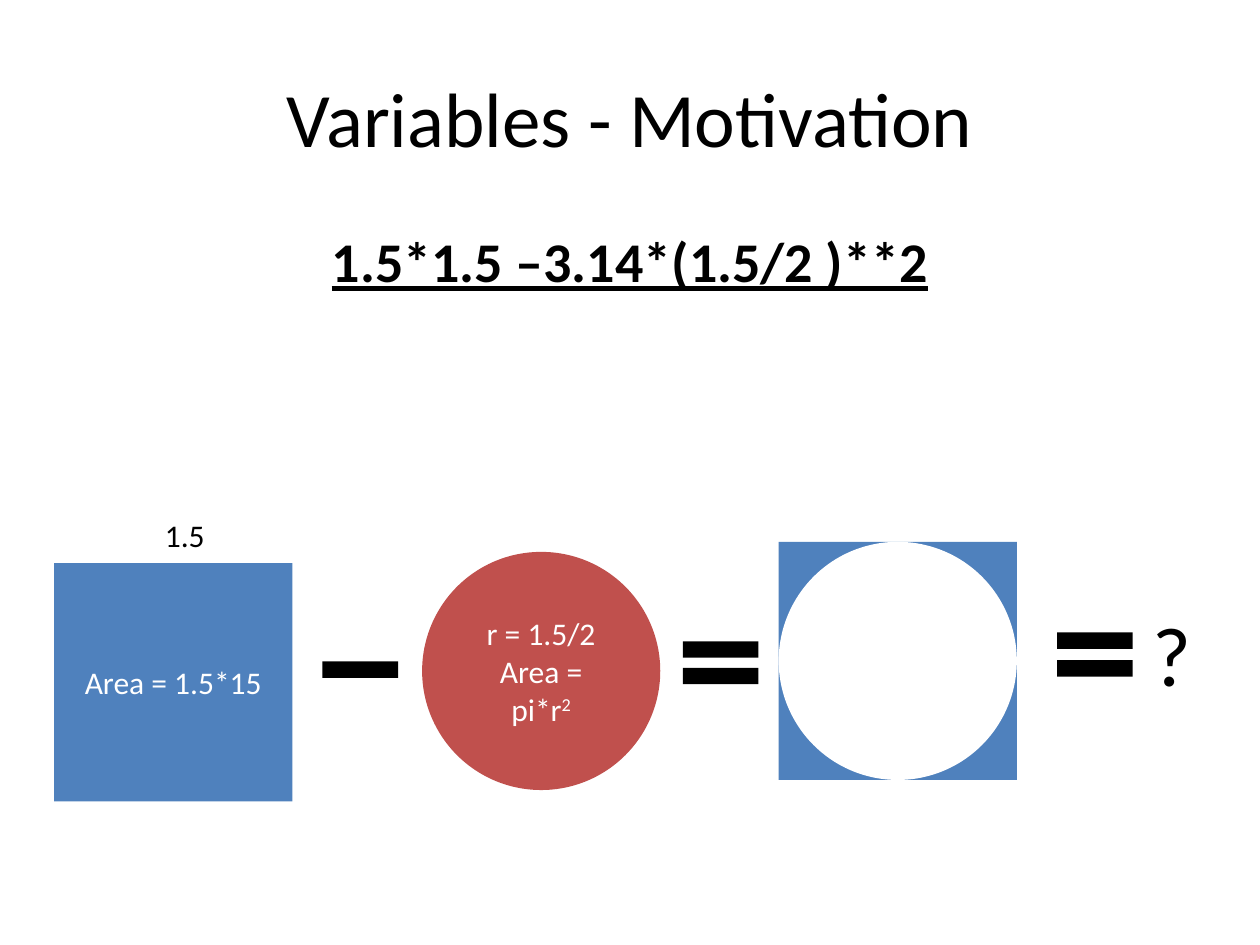
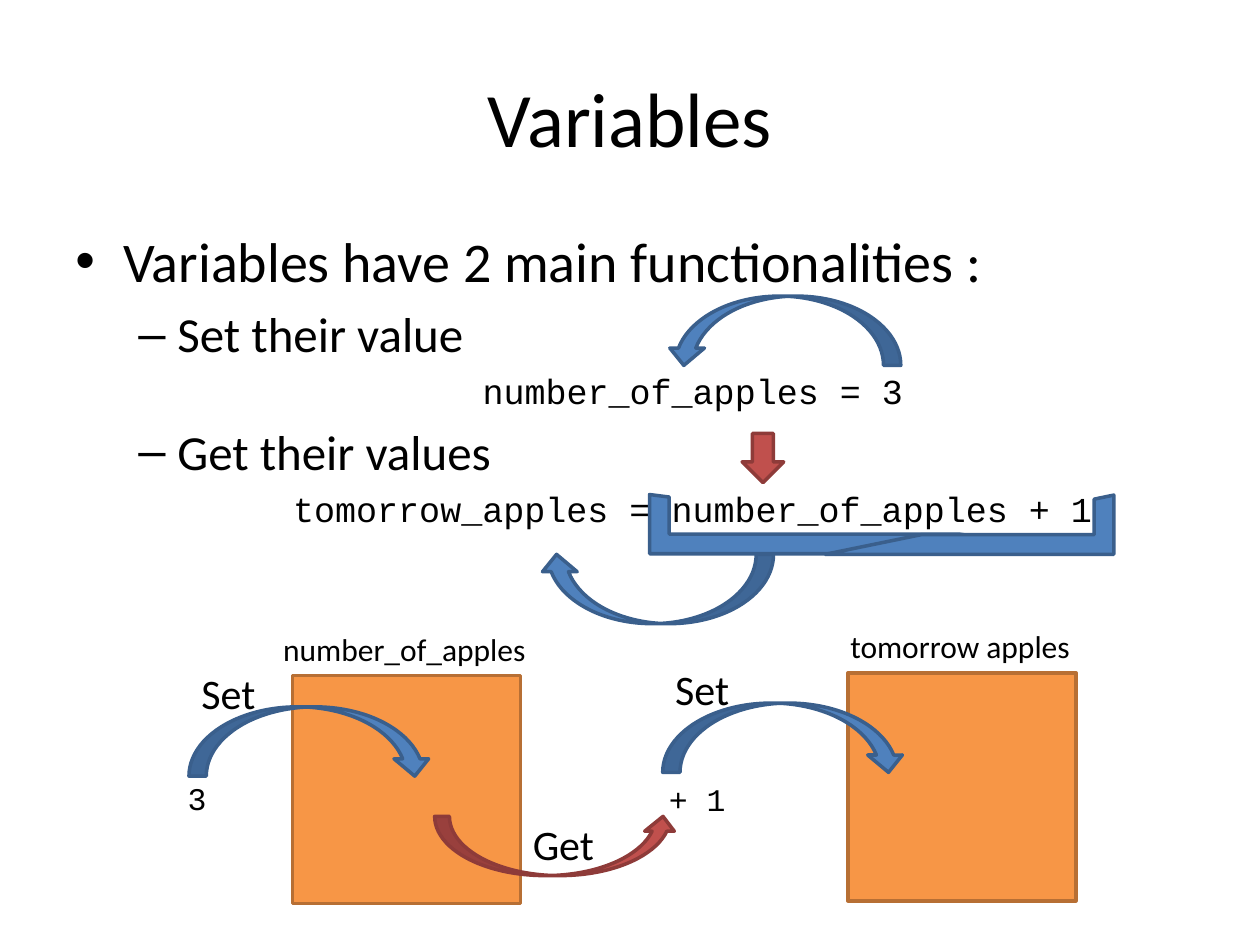
"""Build two slides that introduce variables."""
from lxml.etree import SubElement
from pptx import Presentation
from pptx.dml.color import RGBColor
from pptx.enum.shapes import MSO_SHAPE as Preset
from pptx.enum.text import MSO_ANCHOR as Anchor, MSO_AUTO_SIZE as AutoSize, PP_ALIGN as Align
from pptx.oxml.ns import qn
from pptx.util import Emu, Pt

EMU_PER_PX = 9144
COLOURS = {
    "black": "000000", "white": "FFFFFF",
    "blue": "4F81BD", "blue_edge": "3A5F8C",
    "red": "C0504D", "red_edge": "8E3B39",
    "orange": "F79646", "orange_edge": "B76F34",
}
SANS, MONO = "Calibri", "Courier New"
BULLETS = {
    "point": dict(level=0, size=32, font=SANS, left=38, hang=-38, mark="•"),
    "subpoint": dict(level=1, size=28, font=SANS, left=81, hang=-31, mark="–"),
    "code": dict(level=2, size=20, font=MONO, left=100, hang=0, mark=None),
}
SQUARE, BOX, BAR_SIZE = 189, 181, (60, 13)


def px(length):
    """Turn px into EMU."""
    return Emu(length * EMU_PER_PX)


def rgb(name):
    """Look up a colour by name."""
    return RGBColor.from_string(COLOURS[name])


def style(paragraph, size, font=SANS, colour="black", align=Align.LEFT):
    """Format a paragraph and all its runs."""
    paragraph.alignment = align
    for run in paragraph.runs:
        run.font.size, run.font.name = Pt(size), font
        run.font.color.rgb = rgb(colour)


def add_text(slide, left, top, width, height, text, size, font=SANS, align=Align.LEFT, wrap=True):
    """Add a text box and return its text frame."""
    frame = slide.shapes.add_textbox(px(left), px(top), px(width), px(height)).text_frame
    frame.word_wrap = wrap
    frame.text = text
    style(frame.paragraphs[0], size, font, align=align)
    return frame


def add_label(slide, left, top, width, height, text, size, font=SANS):
    """Add a short label that does not wrap."""
    frame = add_text(slide, left, top, width, height, text, size, font, wrap=False)
    frame.auto_size = AutoSize.SHAPE_TO_FIT_TEXT


def add_title(slide, text):
    """Add the centred slide title."""
    title = add_text(slide, 50, 30, 900, 125, text, 44, align=Align.CENTER)
    title.vertical_anchor = Anchor.MIDDLE


def add_body(slide, text, size, align=Align.LEFT):
    """Add the main text area with its first paragraph."""
    body = add_text(slide, 50, 175, 900, 495, text, size, align=align)
    body.paragraphs[0].space_before = Pt(size * 0.2)
    return body


def add_figure(slide, preset, left, top, width, height, fill, outlined=False, flip="", turn=0):
    """Add a filled shape, outlined and flipped on request."""
    figure = slide.shapes.add_shape(preset, px(left), px(top), px(width), px(height))
    figure.shadow.inherit = False
    figure.fill.solid()
    figure.fill.fore_color.rgb = rgb(fill)
    if outlined:
        figure.line.color.rgb = rgb(fill + "_edge")
        figure.line.width = Pt(2)
    else:
        figure.line.fill.background()
    for axis in flip:
        figure.element.spPr.xfrm.set("flip" + axis, "1")
    figure.rotation = turn
    return figure


def write_inside(figure, text):
    """Write centred white text inside a shape and return its paragraphs."""
    figure.text_frame.text = text
    figure.text_frame.word_wrap = True
    figure.text_frame.vertical_anchor = Anchor.MIDDLE
    for paragraph in figure.text_frame.paragraphs:
        style(paragraph, 18, colour="white", align=Align.CENTER)
    return figure.text_frame.paragraphs


def add_operator(slide, left, *tops):
    """Draw a minus or equals sign from bars."""
    for top in tops:
        add_figure(slide, Preset.RECTANGLE, left, top, *BAR_SIZE, "black")


def format_bullet(paragraph, kind):
    """Apply the level, indent and mark of a bullet kind."""
    look = BULLETS[kind]
    style(paragraph, look["size"], look["font"],
          align=Align.CENTER if kind == "code" else Align.LEFT)
    paragraph.level = look["level"]
    paragraph.space_before = Pt(look["size"] * 0.2)
    properties = paragraph._p.get_or_add_pPr()
    properties.set("marL", str(px(look["left"])))
    properties.set("indent", str(px(look["hang"])))
    if look["mark"]:
        SubElement(properties, qn("a:buFont")).set("typeface", "Arial")
        SubElement(properties, qn("a:buChar")).set("char", look["mark"])
    else:
        SubElement(properties, qn("a:buNone"))


def add_variable_box(slide, left, top, name):
    """Draw a variable as a box with its name above."""
    add_figure(slide, Preset.RECTANGLE, left, top, BOX, BOX, "orange", outlined=True)
    add_text(slide, left - 51, top - 41, 280, 40, name, 18, align=Align.CENTER)


def add_arc(slide, left, top, width, height, fill="blue", flip=""):
    """Draw a curved arrow."""
    add_figure(slide, Preset.CURVED_DOWN_ARROW, left, top, width, height, fill, True, flip)


def build_motivation(slide):
    """Show the area of a square minus that of a circle."""
    add_title(slide, "Variables - Motivation")
    formula = add_body(slide, "1.5*1.5 –3.14*(1.5/2 )**2", 32, Align.CENTER)
    formula_font = formula.paragraphs[0].runs[0].font
    formula_font.bold = formula_font.underline = True

    for preset, fill in ((Preset.RECTANGLE, "blue"), (Preset.OVAL, "white")):
        add_figure(slide, preset, 618, 430, SQUARE, SQUARE, fill)
    square = add_figure(slide, Preset.RECTANGLE, 43, 447, SQUARE, SQUARE, "blue")
    write_inside(square, "Area = 1.5*15")
    circle = add_figure(slide, Preset.OVAL, 335, 438, SQUARE, SQUARE, "red")
    area = write_inside(circle, "r = 1.5/2\nArea = pi*r")[1]
    exponent = area.add_run()
    exponent.text = "2"
    style(area, 18, colour="white", align=Align.CENTER)
    exponent.font._element.set("baseline", "30000")

    add_operator(slide, 256, 525)
    add_operator(slide, 542, 509, 530)
    add_operator(slide, 839, 502, 524)
    add_label(slide, 905, 473, 51, 91, "?", 48)
    add_label(slide, 121, 405, 52, 40, "1.5", 18)


def build_variables(slide):
    """Show how variables are set and read."""
    add_title(slide, "Variables")
    points = (
        ("point", "Variables have 2 main functionalities :"),
        ("subpoint", "Set their value"),
        ("code", "number_of_apples = 3"),
        ("subpoint", "Get their values"),
        ("code", "tomorrow_apples = number_of_apples + 1"),
    )
    body = add_body(slide, "\n".join(text for _, text in points), 32)
    for paragraph, (kind, _) in zip(body.paragraphs, points):
        format_bullet(paragraph, kind)

    add_variable_box(slide, 232, 536, "number_of_apples")
    add_variable_box(slide, 673, 534, "tomorrow apples")
    add_label(slide, 139, 613, 35, 40, "3", 18, MONO)
    add_arc(slide, 345, 648, 193, 47, "red", "V")
    add_label(slide, 413, 645, 69, 50, "Get", 24)
    for left, top in ((150, 561), (526, 558)):
        add_arc(slide, left, top, 193, 55)
        add_label(slide, left, top - 36, 63, 50, "Set", 24)
    add_label(slide, 521, 614, 65, 40, "+ 1", 18, MONO)

    add_arc(slide, 529, 235, 186, 55, flip="H")
    add_arc(slide, 428, 440, 186, 55, flip="HV")
    add_figure(slide, Preset.HALF_FRAME, 676, 232, 47, 368, "blue", True, turn=270)
    add_figure(slide, Preset.HALF_FRAME, 746, 302, 47, 229, "blue", True, "V", 270)
    add_figure(slide, Preset.DOWN_ARROW, 589, 344, 33, 39, "red", True)


def main():
    """Build and save the presentation."""
    deck = Presentation()
    deck.slide_width, deck.slide_height = px(1000), px(750)
    blank = deck.slide_layouts[6]
    for build in (build_motivation, build_variables):
        build(deck.slides.add_slide(blank))
    deck.save("out.pptx")


if __name__ == "__main__":
    main()
